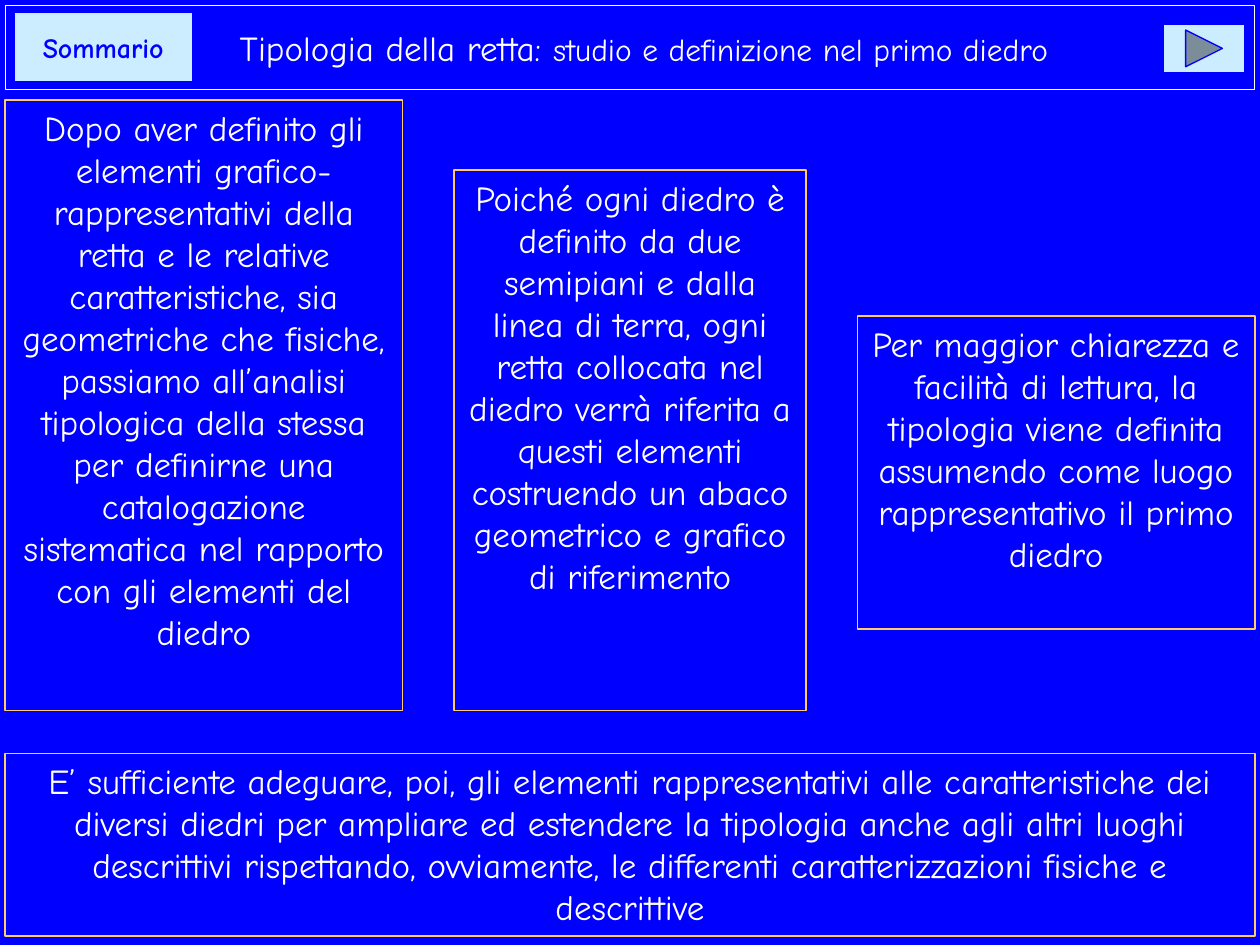
from pptx import Presentation
from pptx.dml.color import RGBColor
from pptx.enum.shapes import MSO_SHAPE
from pptx.enum.text import MSO_ANCHOR, MSO_AUTO_SIZE, PP_ALIGN
from pptx.util import Pt

NEXT = MSO_SHAPE.ACTION_BUTTON_FORWARD_OR_NEXT
BLANK = MSO_SHAPE.ACTION_BUTTON_CUSTOM
MIDDLE = MSO_ANCHOR.MIDDLE
TOP = MSO_ANCHOR.TOP
FIXED = MSO_AUTO_SIZE.NONE
LEFT = PP_ALIGN.LEFT
CENTER = PP_ALIGN.CENTER

BLUE = "0000FF"
WHITE = "FFFFFF"
GOLD = "FFCC66"
PALE = "CCECFF"

PANELS = [
    ((3, 57.3, 227, 348.7),
     "Dopo aver definito gli elementi grafico-rappresentativi della retta "
     "e le relative caratteristiche, sia geometriche che fisiche, passiamo "
     "all’analisi tipologica della stessa per definirne una catalogazione "
     "sistematica nel rapporto con gli elementi del diedro"),
    ((259.4, 97.2, 201.4, 308.8),
     "Poiché ogni diedro è definito da due semipiani e dalla linea di "
     "terra, ogni retta collocata nel diedro verrà riferita a questi "
     "elementi costruendo un abaco geometrico e grafico di riferimento"),
    ((490, 180.7, 227, 178.7),
     "Per maggior chiarezza e facilità di lettura, la tipologia viene "
     "definita assumendo come luogo rappresentativo il primo diedro"),
    ((3, 430.5, 714, 104.4),
     "E’ sufficiente adeguare, poi, gli elementi rappresentativi alle "
     "caratteristiche dei diversi diedri per ampliare ed estendere la "
     "tipologia anche agli altri luoghi descrittivi rispettando, "
     "ovviamente, le differenti caratterizzazioni fisiche e descrittive"),
]


def color(code):
    return RGBColor.from_string(code)


class Board:
    font = "Comic Neue"
    size = 20

    def __init__(self, deck):
        self.slide = deck.slides.add_slide(deck.slide_layouts[5])
        fill = self.slide.background.fill
        fill.solid()
        fill.fore_color.rgb = color(BLUE)

    def edge(self, shape, code, width):
        shape.line.color.rgb = color(code)
        shape.line.width = Pt(width)

    def style(self, run, size, code, bold=False):
        run.font.name = self.font
        run.font.size = Pt(size)
        run.font.bold = bold
        run.font.color.rgb = color(code)

    def frame(self, shape, anchor):
        frame = shape.text_frame
        frame.word_wrap = True
        frame.auto_size = FIXED
        frame.vertical_anchor = anchor
        return frame

    def title(self, box, parts, indent):
        shape = self.slide.shapes.title
        shape.left, shape.top, shape.width, shape.height = map(Pt, box)
        self.edge(shape, WHITE, 0.75)
        frame = self.frame(shape, MIDDLE)
        frame.margin_left = Pt(indent)
        para = frame.paragraphs[0]
        para.alignment = LEFT
        for text, size in parts:
            run = para.add_run()
            run.text = text
            self.style(run, size, WHITE)

    def panel(self, box, text):
        shape = self.slide.shapes.add_textbox(*map(Pt, box))
        self.edge(shape, GOLD, 1)
        frame = self.frame(shape, TOP)
        frame.text = text
        para = frame.paragraphs[0]
        para.alignment = CENTER
        self.style(para.runs[0], self.size, WHITE)

    def button(self, kind, box, text=""):
        shape = self.slide.shapes.add_shape(kind, *map(Pt, box))
        shape.shadow.inherit = False
        shape.fill.solid()
        shape.fill.fore_color.rgb = color(PALE)
        self.edge(shape, BLUE, 0)
        if text:
            frame = self.frame(shape, MIDDLE)
            frame.text = text
            para = frame.paragraphs[0]
            para.alignment = CENTER
            self.style(para.runs[0], 16, BLUE, True)


def main():
    deck = Presentation()
    deck.slide_width, deck.slide_height = Pt(720), Pt(540)
    board = Board(deck)
    board.title((3, 3, 714, 48.2),
                [("Tipologia della retta: ", 20),
                 ("studio e definizione nel primo diedro", 18)], 134)
    for box, text in PANELS:
        board.panel(box, text)
    board.button(NEXT, (664.8, 13.7, 46.5, 28))
    board.button(BLANK, (8, 7.2, 102, 39.4), "Sommario")
    deck.save("out.pptx")


if __name__ == "__main__":
    main()
